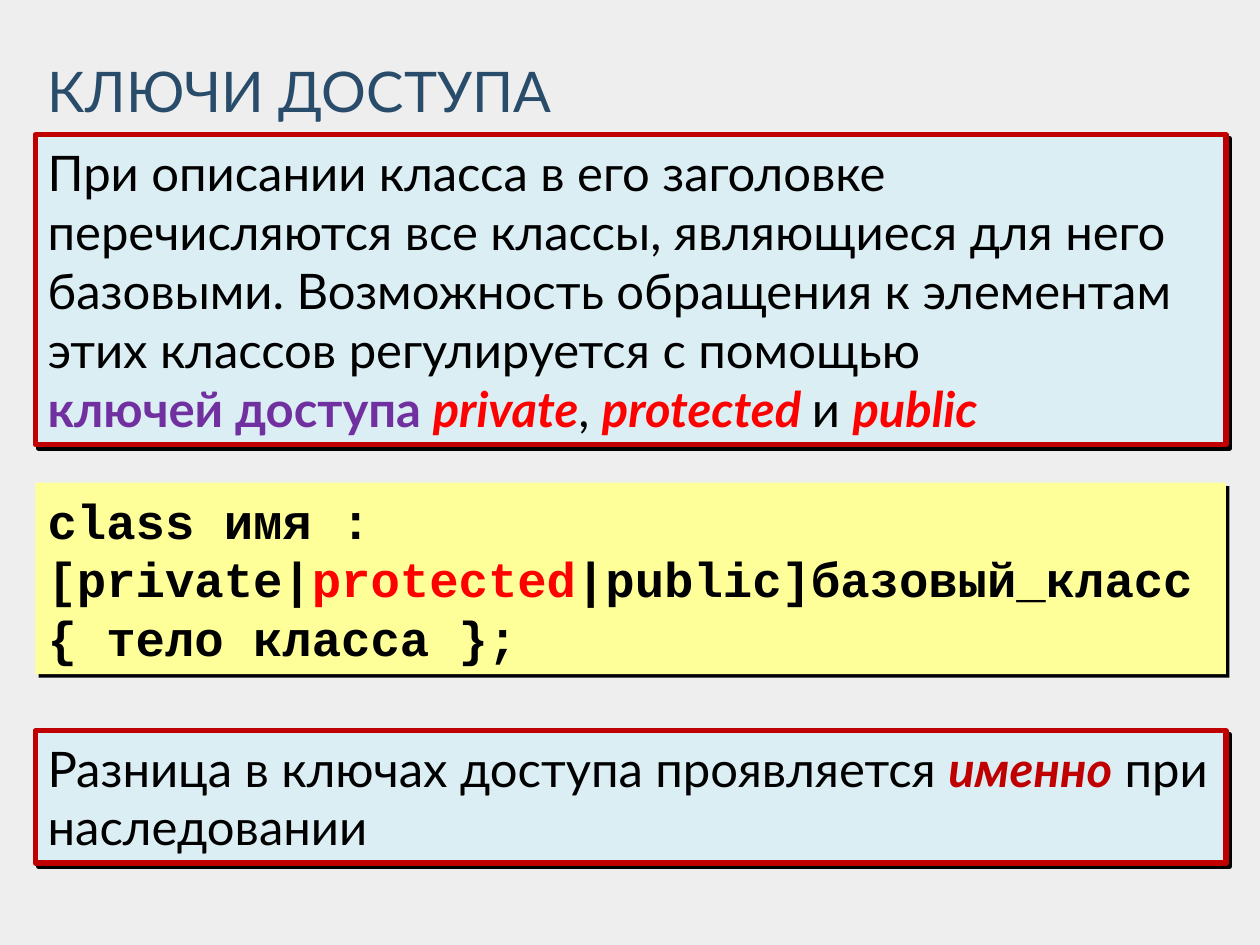
from lxml import etree
from pptx import Presentation, util as u
from pptx.dml.color import RGBColor
from pptx.enum import shapes, text
from pptx.oxml import ns

WIDE, HIGH = 10, 7.5
LEFT, SPAN = 0.028 * WIDE, 0.945 * WIDE  # shared column
SANS, MONO = "Lato", "Courier New"
RED, DARK = "FF0000", "C00000"


def color(code):
    return RGBColor.from_string(code)


def write(para, words, size=28, face=SANS, tint="000000", bold=False, slant=False):
    run = para.add_run()
    run.text = words
    font = run.font
    font.size, font.name = u.Pt(size), face
    font.bold, font.italic = bold, slant
    font.color.rgb = color(tint)


def place(shape, box):
    shape.left, shape.top, shape.width, shape.height = map(u.Inches, box)


def frame(shape, pad):
    body = shape.text_frame
    body.word_wrap = True
    body.auto_size = text.MSO_AUTO_SIZE.NONE
    body.vertical_anchor = text.MSO_ANCHOR.MIDDLE
    body.margin_left = body.margin_right = u.Inches(0.1)
    body.margin_top = body.margin_bottom = u.Inches(pad)
    return body


def shade(shape):
    # Hard black shadow, down and to the right
    props = shape._element.spPr
    for old in props.findall(ns.qn("a:effectLst")):
        props.remove(old)
    effect = etree.SubElement(props, ns.qn("a:effectLst"))
    drop = etree.SubElement(effect, ns.qn("a:outerShdw"), blurRad="0",
                            dist=str(u.Pt(2.8)), dir="2700000",
                            algn="ctr", rotWithShape="0")
    etree.SubElement(drop, ns.qn("a:srgbClr"), val="000000")


def title(slide, box, words):
    head = slide.shapes.title
    place(head, box)
    para = frame(head, 0).paragraphs[0]
    para.alignment = text.PP_ALIGN.LEFT
    write(para, words, size=32, tint="284C6A")


def panel(slide, box, lines, fill, edge=None, **base):
    """Each line is a list of (words, format) runs; None breaks the line."""
    card = slide.shapes.add_shape(shapes.MSO_SHAPE.RECTANGLE, *map(u.Inches, box))
    card.fill.solid()
    card.fill.fore_color.rgb = color(fill)
    if edge:
        card.line.color.rgb = color(edge)
        card.line.width = u.Pt(3)
    else:
        card.line.fill.background()
    shade(card)
    body = frame(card, 0.05)
    for row, runs in enumerate(lines):
        para = body.add_paragraph() if row else body.paragraphs[0]
        para.alignment = text.PP_ALIGN.LEFT
        for part in runs:
            if part is None:
                para.add_line_break()
            else:
                words, style = part
                write(para, words, **{**base, **style})


def main():
    deck = Presentation()
    deck.slide_width, deck.slide_height = u.Inches(WIDE), u.Inches(HIGH)
    slide = deck.slides.add_slide(deck.slide_layouts[5])
    back = slide.background.fill
    back.solid()
    back.fore_color.rgb = color("EEEEEE")

    title(slide, (LEFT, 0.36, SPAN, 0.71), "КЛЮЧИ ДОСТУПА")

    note = {"fill": "DBEEF4", "edge": DARK}
    key = {"tint": RED, "bold": True, "slant": True}

    # What access keys are
    panel(slide, (LEFT, 1.07, SPAN, 2.46), [[
        ("При описании класса в его заголовке перечисляются все классы, "
         "являющиеся для него базовыми. Возможность обращения к элементам "
         "этих классов регулируется с помощью ", {}),
        None,
        ("ключей доступа ", {"tint": "7030A0", "bold": True}),
        ("private", key), (", ", {}),
        ("protected ", key), ("и ", {}), ("public", key),
    ]], **note)

    # Syntax
    panel(slide, (LEFT, 3.83, SPAN, 1.52), [
        [("class имя :", {})],
        [("[private|", {}), ("protected", {"tint": RED}),
         ("|public]базовый_класс", {})],
        [("{ тело класса };", {})],
    ], fill="FFFF99", face=MONO, bold=True)

    # Remark
    panel(slide, (LEFT, 5.8, SPAN, 1.05), [[
        ("Разница в ключах доступа проявляется ", {}),
        ("именно", {**key, "tint": DARK}),
        (" при наследовании", {}),
    ]], **note)

    deck.save("out.pptx")


if __name__ == "__main__":
    main()
